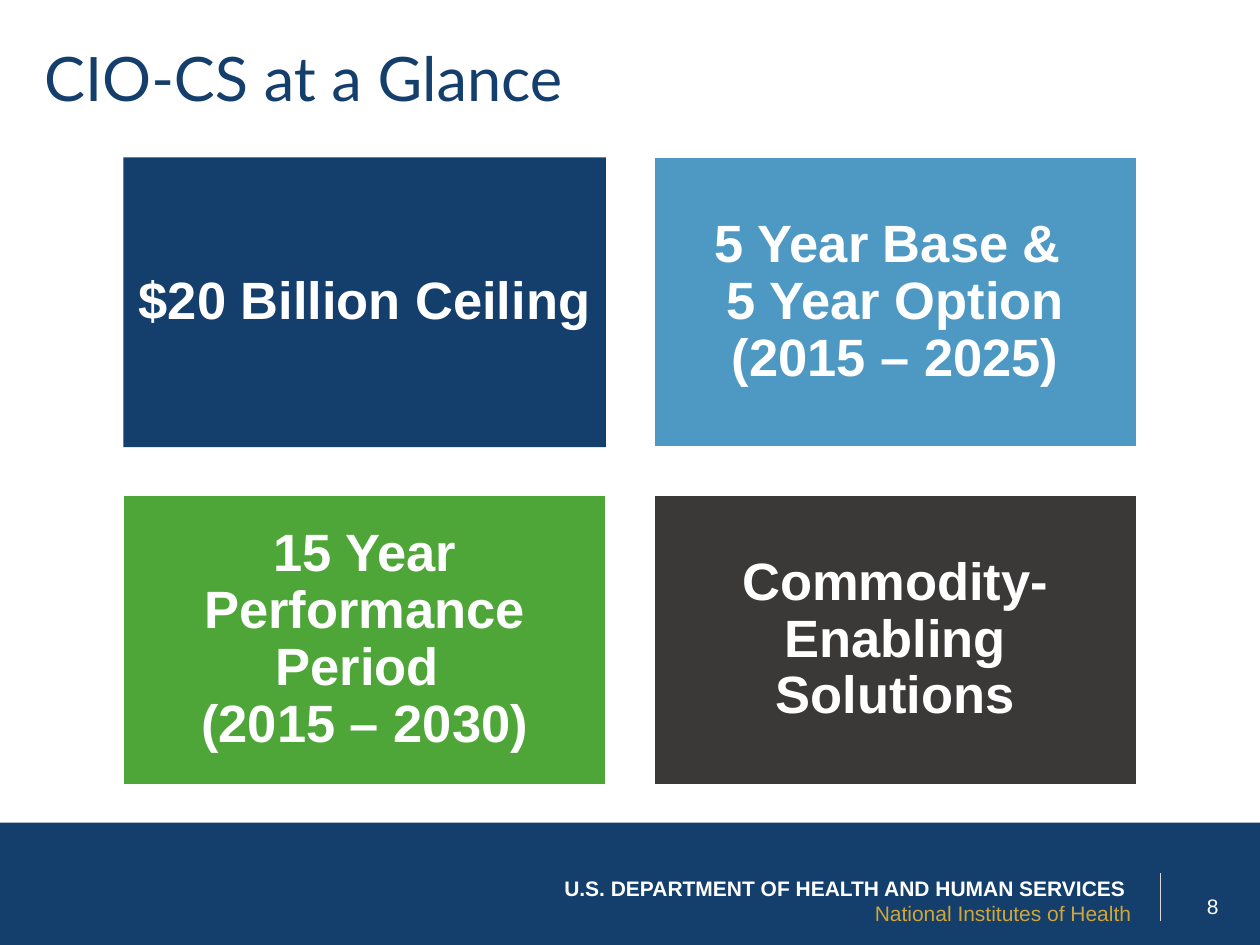
from pptx import Presentation
from pptx.dml.color import RGBColor
from pptx.enum.shapes import MSO_CONNECTOR, MSO_SHAPE
from pptx.enum.text import MSO_ANCHOR, PP_ALIGN
from pptx.oxml.ns import qn
from pptx.util import Inches, Pt
from lxml import etree

RECTANGLE, STRAIGHT = MSO_SHAPE.RECTANGLE, MSO_CONNECTOR.STRAIGHT
MIDDLE = MSO_ANCHOR.MIDDLE
LEFT, CENTER, RIGHT = PP_ALIGN.LEFT, PP_ALIGN.CENTER, PP_ALIGN.RIGHT

SLIDE_W, SLIDE_H = 10, 7.5
COLORS = {
    "navy": "143E6B", "blue": "4E99C4", "green": "4EA639",
    "charcoal": "3B3838", "gold": "CFA639", "rule": "D9D9D9", "white": "FFFFFF",
}

# Fill, outline and wording of each tile, row by row; \v is a line break
TILES = [
    ("navy", None, "$20 Billion Ceiling"),
    ("blue", "white", "5 Year Base & \v5 Year Option\v(2015 – 2025)"),
    ("green", "white", "15 Year Performance Period \v(2015 – 2030)"),
    ("charcoal", "white", "Commodity-Enabling Solutions"),
]


def rgb(name):
    return RGBColor.from_string(COLORS[name])


def inches(*lengths):
    return [Inches(length) for length in lengths]


def format_paragraph(paragraph, size, color, align, font="Arial", bold=False, spacing=None):
    paragraph.alignment = align
    paragraph.line_spacing = spacing
    for run in paragraph.runs:
        run.font.name, run.font.size, run.font.bold = font, Pt(size), bold
        run.font.color.rgb = rgb(color)


def add_block(slide, box, fill, outline=None):
    block = slide.shapes.add_shape(RECTANGLE, *inches(*box))
    block.shadow.inherit = False
    block.fill.solid()
    block.fill.fore_color.rgb = rgb(fill)
    if outline:
        block.line.color.rgb = rgb(outline)
        block.line.width = Pt(1)
    else:
        block.line.fill.background()
    return block


def add_label(slide, box, lines):
    """Right-aligned 12 pt text; lines holds (text, color, bold)."""
    frame = slide.shapes.add_textbox(*inches(*box)).text_frame
    frame.word_wrap = True
    frame.vertical_anchor = MIDDLE
    frame.text = "\n".join(text for text, _, _ in lines)
    for paragraph, (_, color, bold) in zip(frame.paragraphs, lines):
        format_paragraph(paragraph, 12, color, RIGHT, bold=bold)


def place_title(slide, box, text):
    title = slide.shapes.title
    title.left, title.top, title.width, title.height = inches(*box)
    frame = title.text_frame
    frame.text = text
    frame.vertical_anchor = MIDDLE
    format_paragraph(frame.paragraphs[0], 35, "navy", LEFT, font="Lato", spacing=0.9)


def add_tiles(slide, box, gap=0.38, columns=2):
    left, top, width, height = box
    rows = len(TILES) // columns
    tile_w = (width - gap * (columns - 1)) / columns
    tile_h = (height - gap * (rows - 1)) / rows
    for index, (fill, outline, text) in enumerate(TILES):
        row, column = divmod(index, columns)
        tile_box = (left + column * (tile_w + gap), top + row * (tile_h + gap), tile_w, tile_h)
        frame = add_block(slide, tile_box, fill, outline).text_frame
        frame.margin_left = frame.margin_right = Inches(0.12)
        frame.margin_top = frame.margin_bottom = Inches(0.12)
        frame.word_wrap = True
        frame.vertical_anchor = MIDDLE
        frame.text = text
        format_paragraph(frame.paragraphs[0], 30, "white", CENTER, bold=True, spacing=0.9)


def add_footer(slide, box, number):
    left, top, width, _ = box
    right = left + width
    add_block(slide, box, "navy")

    # Rule between the agency name and the slide number
    rule_x = right - 0.79
    rule = slide.shapes.add_connector(STRAIGHT, *inches(rule_x, top + 0.4, rule_x, top + 0.78))
    rule.line.color.rgb = rgb("rule")
    rule.line.width = Pt(0.5)
    etree.SubElement(rule._element.spPr, qn("a:effectLst"))

    add_label(slide, (right - 0.69, top + 0.46, 0.46, 0.4), [(number, "white", False)])
    add_label(slide, (right - 6.69, top + 0.42, 5.77, 0.4), [
        ("U.S. DEPARTMENT OF HEALTH AND HUMAN SERVICES ", "white", True),
        ("National Institutes of Health", "gold", False),
    ])


def main():
    deck = Presentation()
    deck.slide_width, deck.slide_height = inches(SLIDE_W, SLIDE_H)
    slide = deck.slides.add_slide(deck.slide_layouts[5])
    place_title(slide, (0.25, 0.25, 9.46, 0.8), "CIO-CS at a Glance")
    add_footer(slide, (0, 6.53, SLIDE_W, SLIDE_H - 6.53), "8")
    add_tiles(slide, (0.98, 1.25, 8.04, 4.98))
    deck.save("out.pptx")


if __name__ == "__main__":
    main()
